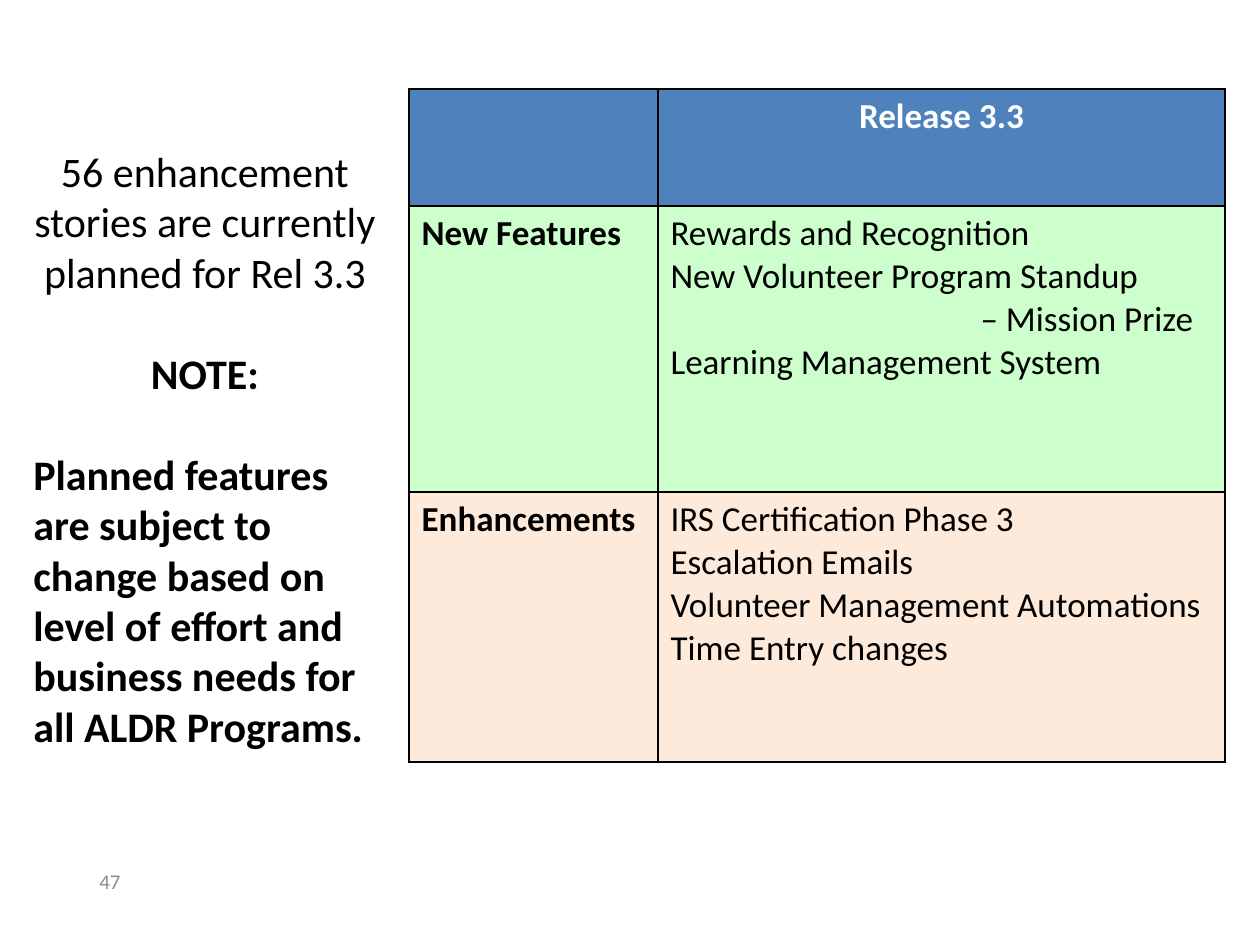
from lxml import etree
from pptx import Presentation
from pptx import util as u
from pptx.dml.color import RGBColor
from pptx.enum import text
from pptx.oxml.ns import qn

SCALE = 914400 / 126
CENTER = text.PP_ALIGN.CENTER
COLS = (249, 567)
ROWS = (117, 286, 270)
FILLS = ("4F81BD", "CCFFCC", "FDEADA")
HEAD = {"size": 20, "bold": True, "color": "FFFFFF"}
LABEL = {"size": 20, "bold": True}
ITEM = {"size": 20, "bold": False}
NOTE = {"size": 24}
STRONG = {"size": 24, "bold": True}


def px(n):
    return u.Emu(round(n * SCALE))


def rgb(code):
    return RGBColor.from_string(code)


def write(frame, lines):
    """Fill a frame from (words, font values, paragraph values) tuples."""
    for i, (words, look, layout) in enumerate(lines):
        para = frame.paragraphs[0] if i == 0 else frame.add_paragraph()
        for key, val in layout.items():
            if key == "indent":
                para._p.get_or_add_pPr().set("marL", str(px(val)))
            else:
                setattr(para, key, val)
        run = para.add_run()
        run.text = words
        vals = {"name": "Calibri", "color": "000000", **look}
        run.font.color.rgb = rgb(vals.pop("color"))
        vals["size"] = u.Pt(vals["size"])
        for key, val in vals.items():
            setattr(run.font, key, val)


def edge(cell):
    """Put a thin black line on all four sides of a cell."""
    props = cell._tc.get_or_add_tcPr()
    for i, side in enumerate(("lnL", "lnR", "lnT", "lnB")):
        line = etree.Element(qn("a:" + side), w=str(u.Pt(1)))
        fill = etree.SubElement(line, qn("a:solidFill"))
        etree.SubElement(fill, qn("a:srgbClr"), val="000000")
        props.insert(i, line)


def items(*words):
    return [(word, ITEM, {}) for word in words]


def plan(slide, left, top):
    """Table of what the release holds."""
    new = items("Rewards and Recognition", "New Volunteer Program Standup")
    new.append(("– Mission Prize", ITEM, {"indent": 310}))
    new += items("Learning Management System")
    better = items("IRS Certification Phase 3", "Escalation Emails",
                   "Volunteer Management Automations", "Time Entry changes")
    cells = (
        ([], [("Release 3.3", HEAD, {"alignment": CENTER})]),
        ([("New Features", LABEL, {})], new),
        ([("Enhancements", LABEL, {})], better),
    )
    grid = slide.shapes.add_table(
        len(ROWS), len(COLS), px(left), px(top), px(sum(COLS)), px(sum(ROWS))).table
    for col, wide in zip(grid.columns, COLS):
        col.width = px(wide)
    for r, (high, fill) in enumerate(zip(ROWS, FILLS)):
        grid.rows[r].height = px(high)
        for c, lines in enumerate(cells[r]):
            cell = grid.cell(r, c)
            cell.fill.solid()
            cell.fill.fore_color.rgb = rgb(fill)
            edge(cell)
            write(cell.text_frame, lines)


def label(slide, box, lines, anchor=text.MSO_ANCHOR.TOP):
    frame = slide.shapes.add_textbox(*map(px, box)).text_frame
    frame.word_wrap = True
    frame.vertical_anchor = anchor
    write(frame, lines)


def note(slide, box):
    gap = {"space_before": u.Pt(29)}
    label(slide, box, [
        ("56 enhancement stories are currently planned for Rel 3.3", NOTE,
         {"alignment": CENTER}),
        ("NOTE:", STRONG, {"alignment": CENTER, **gap}),
        ("Planned features are subject to change based on level of effort "
         "and business needs for all ALDR Programs.", STRONG, gap),
    ])


def main():
    deck = Presentation()
    deck.slide_width, deck.slide_height = px(1260), px(945)
    slide = deck.slides.add_slide(deck.slide_layouts[6])
    plan(slide, 409, 89)
    note(slide, (21, 139, 368, 624))
    label(slide, (87, 856, 88, 50), [("47", {"size": 12, "color": "8C8C8C"}, {})],
          text.MSO_ANCHOR.MIDDLE)
    deck.save("out.pptx")


if __name__ == "__main__":
    main()
